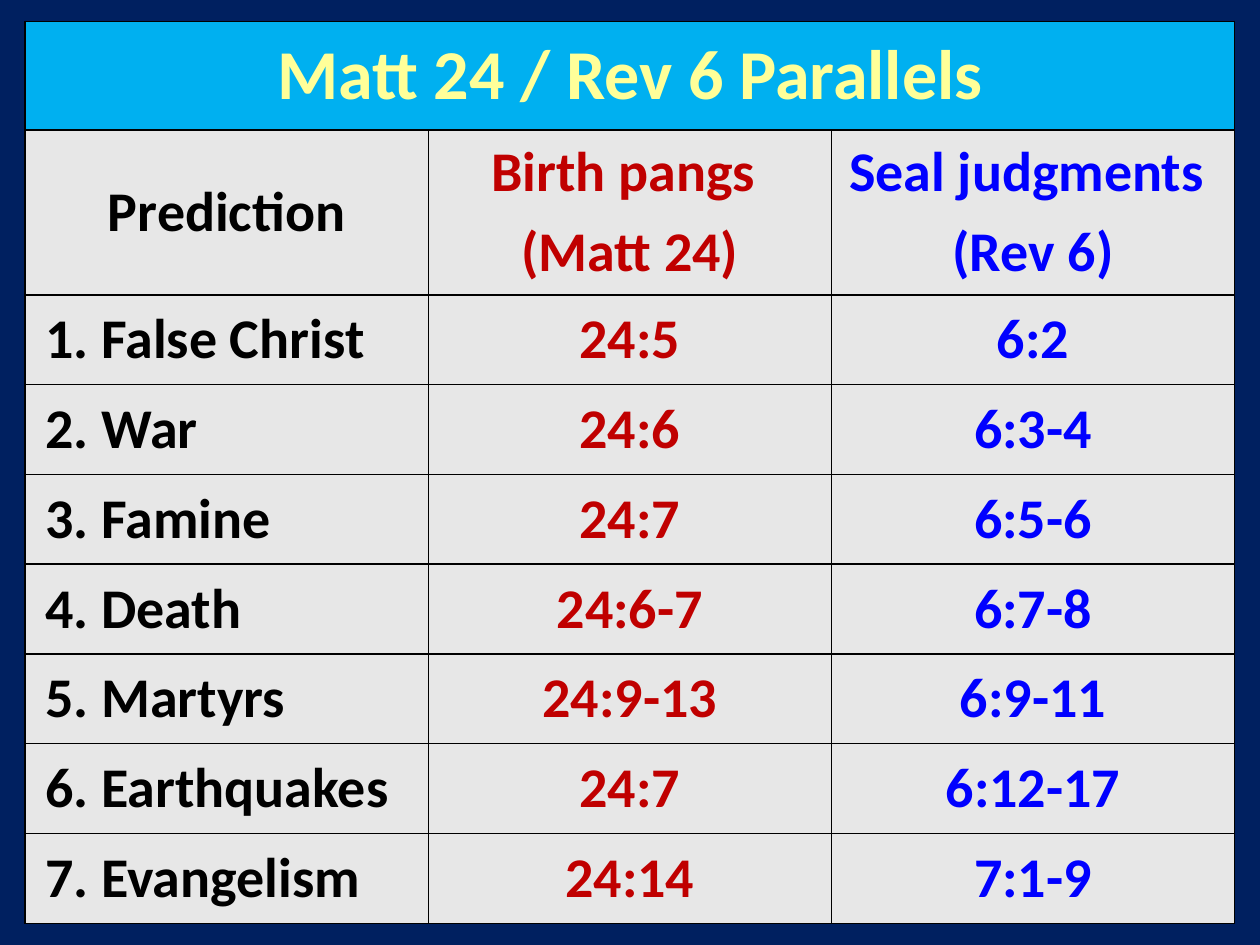
from lxml.etree import SubElement
from pptx import Presentation
from pptx.dml.color import RGBColor
from pptx.enum.text import MSO_ANCHOR as Anchor, PP_ALIGN as Align
from pptx.oxml.ns import qn
from pptx.util import Inches, Pt

BLACK, RED, BLUE = "000000", "C00000", "0000FF"
NAVY, SKY, YELLOW, GREY = "002060", "00B0F0", "FFFF99", "E7E7E7"
COLUMN_COLOURS = (BLACK, RED, BLUE)
HEADINGS = ("Prediction", "Birth pangs \n(Matt 24)", "Seal judgments \n(Rev 6)")
PARALLELS = (
    ("1. False Christ", "24:5", "6:2"),
    ("2. War", "24:6", "6:3-4"),
    ("3. Famine", "24:7", "6:5-6"),
    ("4. Death", "24:6-7", "6:7-8"),
    ("5. Martyrs", "24:9-13", "6:9-11"),
    ("6. Earthquakes", "24:7", "6:12-17"),
    ("7. Evangelism", "24:14", "7:1-9"),
)
TITLE_HEIGHT, HEADING_HEIGHT = 0.86, 1.31


def rgb(value):
    return RGBColor.from_string(value)


def paint(fill, colour):
    fill.solid()
    fill.fore_color.rgb = rgb(colour)


def add_borders(cell):
    properties = cell._tc.get_or_add_tcPr()
    for side in ("lnL", "lnR", "lnT", "lnB"):
        border = SubElement(properties, qn(f"a:{side}"), w=str(Pt(1)))
        SubElement(SubElement(border, qn("a:solidFill")), qn("a:srgbClr"), val=BLACK)


def write_cell(cell, wording, colour, size=32, centred=True):
    cell.vertical_anchor = Anchor.MIDDLE
    cell.text = wording
    for index, paragraph in enumerate(cell.text_frame.paragraphs):
        paragraph.alignment = Align.CENTER if centred else Align.LEFT
        if index:
            paragraph.space_before = Pt(size * 0.2)
        if not centred:
            paragraph._p.get_or_add_pPr().set("marL", str(Inches(0.06)))
        for run in paragraph.runs:
            font_format = {"name": "Calibri", "size": Pt(size), "bold": True}
            for attribute, value in font_format.items():
                setattr(run.font, attribute, value)
            run.font.color.rgb = rgb(colour)


def add_parallels_table(slide, left, top, width, height):
    row_count, column_count = len(PARALLELS) + 2, len(HEADINGS)
    table = slide.shapes.add_table(
        row_count, column_count, Inches(left), Inches(top), Inches(width), Inches(height)
    ).table
    table.first_row = table.horz_banding = False
    verse_height = (height - TITLE_HEIGHT - HEADING_HEIGHT) / len(PARALLELS)
    row_heights = [TITLE_HEIGHT, HEADING_HEIGHT] + [verse_height] * len(PARALLELS)
    for row, row_height in zip(table.rows, row_heights):
        row.height = Inches(row_height)
    for column in table.columns:
        column.width = Inches(width / column_count)
    for row_index, row in enumerate(table.rows):
        for cell in row.cells:
            add_borders(cell)
            paint(cell.fill, GREY if row_index else SKY)

    title = table.cell(0, 0)
    title.merge(table.cell(0, column_count - 1))
    write_cell(title, "Matt 24 / Rev 6 Parallels", YELLOW, size=40)
    for row_index, entries in enumerate((HEADINGS, *PARALLELS), start=1):
        for column_index, entry in enumerate(entries):
            write_cell(
                table.cell(row_index, column_index),
                entry,
                COLUMN_COLOURS[column_index],
                centred=row_index == 1 or column_index > 0,
            )


def main():
    presentation = Presentation()
    presentation.slide_width, presentation.slide_height = Inches(10), Inches(7.5)
    slide = presentation.slides.add_slide(presentation.slide_layouts[6])
    paint(slide.background.fill, NAVY)
    add_parallels_table(slide, 0.2, 0.17, 9.6, 7.16)
    presentation.save("out.pptx")


if __name__ == "__main__":
    main()
